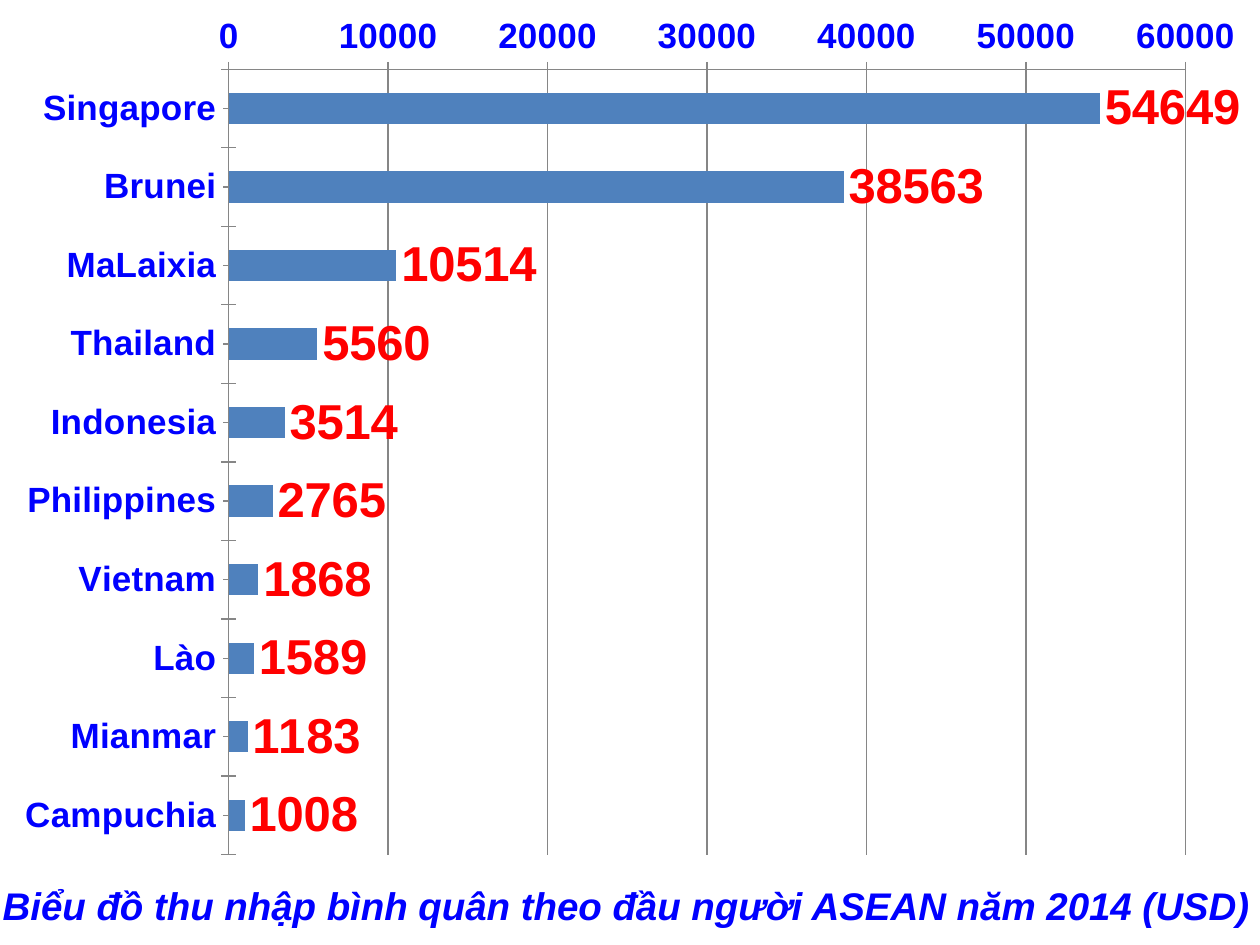
from dataclasses import dataclass

from pptx import Presentation
from pptx.chart.data import CategoryChartData
from pptx.dml.color import RGBColor
from pptx.enum.chart import XL_CHART_TYPE as ChartType
from pptx.enum.chart import XL_LABEL_POSITION as LabelPos
from pptx.enum.chart import XL_TICK_MARK as Tick
from pptx.enum.text import MSO_ANCHOR, MSO_AUTO_SIZE, PP_ALIGN
from pptx.util import Cm, Pt


@dataclass(frozen=True)
class Theme:
    font: str = "Arial"
    text: str = "0000FF"
    value: str = "FF0000"
    bar: str = "4F81BD"
    line: str = "868686"
    base_size: int = 18
    axis_size: int = 20
    title_size: int = 22
    label_size: int = 28


THEME = Theme()
TITLE = "Biểu đồ thu nhập bình quân theo đầu người ASEAN năm 2014 (USD)"
INCOME = {
    "Singapore": 54649,
    "Brunei": 38563,
    "MaLaixia": 10514,
    "Thailand": 5560,
    "Indonesia": 3514,
    "Philippines": 2765,
    "Vietnam": 1868,
    "Lào": 1589,
    "Mianmar": 1183,
    "Campuchia": 1008,
}


def set_font(font, size, color, italic=False):
    font.name = THEME.font
    font.size = Pt(size)
    font.bold = True
    font.italic = italic
    font.color.rgb = RGBColor.from_string(color)


def set_line(line):
    line.color.rgb = RGBColor.from_string(THEME.line)
    line.width = Pt(0.75)


def add_text(p, text, **fmt):
    r = p.add_run()
    r.text = text
    set_font(r.font, **fmt)


def add_title(s, text, left, top, width, height):
    sp = s.shapes.title
    sp.left, sp.top, sp.width, sp.height = left, top, width, height
    tf = sp.text_frame
    tf.word_wrap = True
    tf.auto_size = MSO_AUTO_SIZE.SHAPE_TO_FIT_TEXT
    tf.vertical_anchor = MSO_ANCHOR.TOP
    p = tf.paragraphs[0]
    p.alignment = PP_ALIGN.LEFT
    add_text(p, text, size=THEME.title_size, color=THEME.text, italic=True)


def format_axis(axis):
    axis.major_tick_mark = Tick.CROSS
    axis.minor_tick_mark = Tick.CROSS if axis.reverse_order else Tick.NONE
    set_line(axis.format.line)
    set_font(axis.tick_labels.font, THEME.axis_size, THEME.text)


def add_bar_chart(s, values, left, top, width, height):
    data = CategoryChartData()
    data.categories = list(values)
    data.add_series("Series 1", list(values.values()))
    chart = s.shapes.add_chart(
        ChartType.BAR_CLUSTERED, left, top, width, height, data
    ).chart
    chart.has_title = False
    chart.has_legend = False
    set_font(chart.font, THEME.base_size, THEME.value)

    cat_axis, val_axis = chart.category_axis, chart.value_axis
    cat_axis.reverse_order = True
    val_axis.minimum_scale = 0
    val_axis.maximum_scale = 60000
    val_axis.major_unit = 10000
    val_axis.has_major_gridlines = True
    set_line(val_axis.major_gridlines.format.line)
    for axis in (cat_axis, val_axis):
        format_axis(axis)

    plot = chart.plots[0]
    plot.gap_width = 150
    plot.vary_by_categories = False
    series = plot.series[0]
    series.format.fill.solid()
    series.format.fill.fore_color.rgb = RGBColor.from_string(THEME.bar)
    labels = series.data_labels
    labels.show_value = True
    labels.position = LabelPos.OUTSIDE_END
    set_font(labels.font, THEME.label_size, THEME.value)


def main():
    prs = Presentation()
    prs.slide_width, prs.slide_height = Cm(25.4), Cm(19.05)
    s = prs.slides.add_slide(prs.slide_layouts[5])
    add_bar_chart(s, INCOME, Cm(0), Cm(0), prs.slide_width, Cm(17.58))
    add_title(s, TITLE, Cm(-0.2), Cm(17.65), Cm(26.04), Cm(1.19))
    prs.save("out.pptx")


if __name__ == "__main__":
    main()
